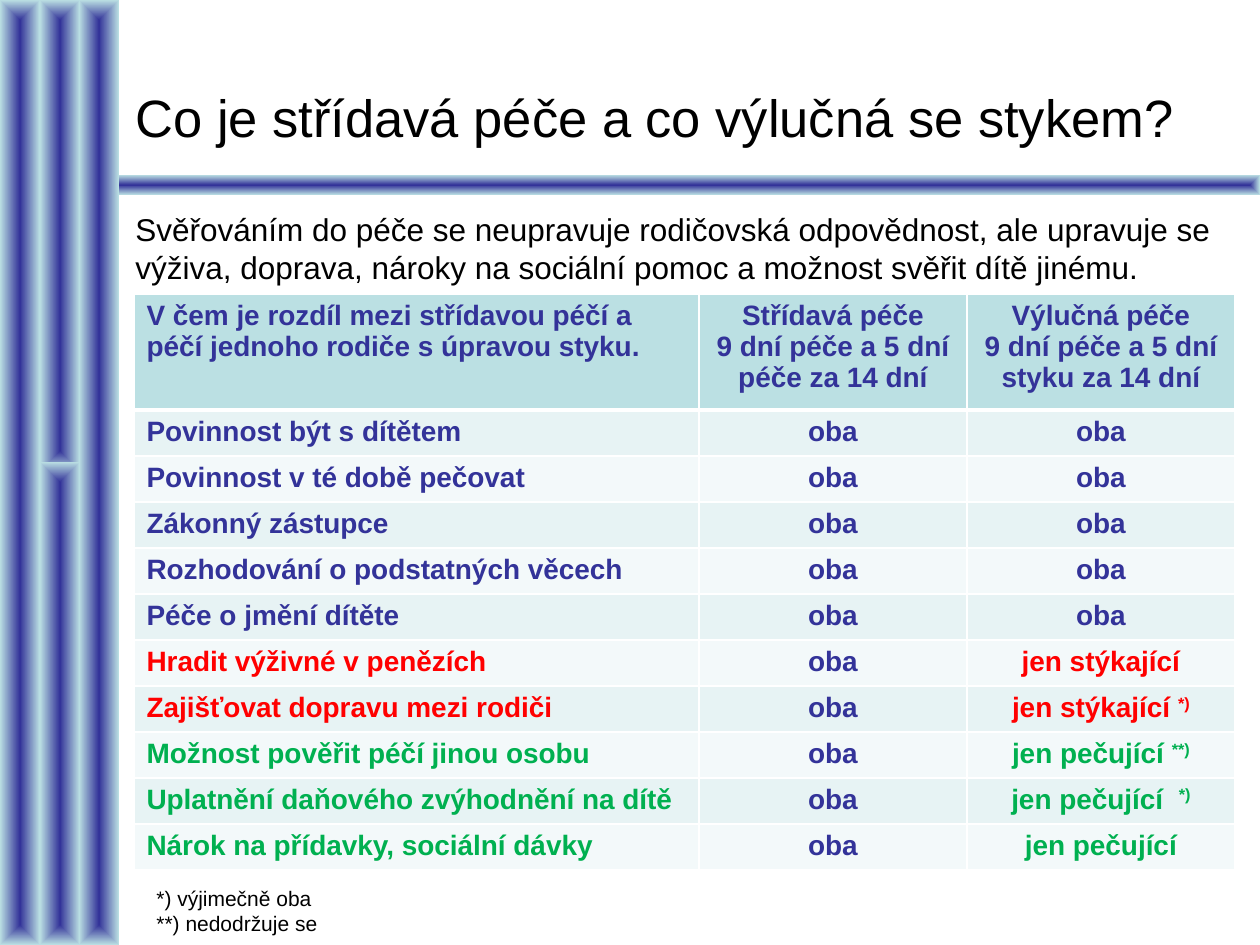
import pptx
import pptx.util
import pptx.dml.color
import pptx.enum.shapes
import pptx.enum.text
import pptx.oxml
import pptx.oxml.ns
from dataclasses import dataclass

ALIGN = pptx.enum.text.PP_ALIGN
ANCHOR = pptx.enum.text.MSO_ANCHOR
PX = 914400 // 126


@dataclass(frozen=True)
class Theme:
    font: str = "Arial"
    black: str = "000000"
    white: str = "FFFFFF"
    navy: str = "333399"
    aqua: str = "BBE0E3"
    red: str = "FF0000"
    green: str = "00B050"
    bands: tuple = ("E7F3F4", "F3F9FA")
    head: int = 30
    lead: int = 18
    cell: int = 16
    note: int = 12


def rgb(code):
    return pptx.dml.color.RGBColor.from_string(code)


def write(frame, text, *, font, size, color, bold=False, align=ALIGN.LEFT, mark=""):
    frame.word_wrap = True
    for i, line in enumerate(text.split("\n")):
        para = frame.paragraphs[0] if i == 0 else frame.add_paragraph()
        para.alignment = align
        for part in filter(None, (line, mark)):
            run = para.add_run()
            run.text = part
            run.font.name = font
            run.font.size = pptx.util.Pt(size)
            run.font.bold = bold
            run.font.color.rgb = rgb(color)
            if part == mark:
                run.font.superscript = True
                run._r.get_or_add_rPr().set("baseline", "30000")


class Deck:
    def __init__(self, theme):
        self.theme = theme
        self.show = pptx.Presentation()
        self.show.slide_width = 1260 * PX
        self.show.slide_height = 945 * PX
        self.slide = self.show.slides.add_slide(self.show.slide_layouts[5])

    def bar(self, *box):
        kind = pptx.enum.shapes.MSO_SHAPE.RECTANGLE
        shape = self.slide.shapes.add_shape(kind, *(n * PX for n in box))
        shape.shadow.inherit = False
        shape.line.fill.background()
        shape.fill.gradient()
        for stop, code in zip(shape.fill.gradient_stops, (self.theme.navy, self.theme.aqua)):
            stop.color.rgb = rgb(code)
        grad = shape._element.spPr.find(pptx.oxml.ns.qn("a:gradFill"))
        grad.remove(grad.find(pptx.oxml.ns.qn("a:lin")))
        grad.append(pptx.oxml.parse_xml(
            f'<a:path {pptx.oxml.ns.nsdecls("a")} path="shape">'
            '<a:fillToRect l="50000" t="50000" r="50000" b="50000"/></a:path>'))

    def title(self, text, *box):
        shape = self.slide.shapes.title
        shape.left, shape.top, shape.width, shape.height = (n * PX for n in box)
        shape.text_frame.vertical_anchor = ANCHOR.MIDDLE
        write(shape.text_frame, text, font=self.theme.font,
              size=self.theme.head, color=self.theme.black)

    def text(self, text, size, *box):
        shape = self.slide.shapes.add_textbox(*(n * PX for n in box))
        write(shape.text_frame, text, font=self.theme.font, size=size, color=self.theme.black)

    def edge(self, cell, top, low):
        props = cell._tc.get_or_add_tcPr()
        for i, (side, width) in enumerate((("L", 1), ("R", 1), ("T", top), ("B", low))):
            props.insert(i, pptx.oxml.parse_xml(
                f'<a:ln{side} {pptx.oxml.ns.nsdecls("a")} w="{width * 12700}"><a:solidFill>'
                f'<a:srgbClr val="{self.theme.white}"/></a:solidFill></a:ln{side}>'))

    def table(self, rows, left, top, cols, first, rest):
        tall = first + rest * (len(rows) - 1)
        grid = self.slide.shapes.add_table(
            len(rows), len(cols), left * PX, top * PX, sum(cols) * PX, tall * PX).table
        grid.horz_banding = False
        for col, width in zip(grid.columns, cols):
            col.width = width * PX
        for r, (cells, tint, mark) in enumerate(rows):
            grid.rows[r].height = (rest if r else first) * PX
            back = self.theme.bands[(r - 1) % 2] if r else self.theme.aqua
            for c, text in enumerate(cells):
                cell = grid.cell(r, c)
                cell.fill.solid()
                cell.fill.fore_color.rgb = rgb(back)
                self.edge(cell, 3 if r == 1 else 1, 1 if r else 3)
                write(cell.text_frame, text, font=self.theme.font, size=self.theme.cell,
                      bold=True, color=self.theme.navy if c == 1 else tint,
                      align=ALIGN.CENTER if c else ALIGN.LEFT, mark=mark if c == 2 else "")


def main():
    theme = Theme()
    deck = Deck(theme)
    for box in ((0, 175, 1260, 20), (0, 0, 40, 945), (79, 0, 40, 945),
                (40, 0, 40, 471), (40, 462, 40, 483)):
        deck.bar(*box)
    deck.title("Co je střídavá péče a co výlučná se stykem?", 123, 38, 1122, 157)

    head = ("V čem je rozdíl mezi střídavou péčí a péčí jednoho rodiče s úpravou styku.",
            "Střídavá péče\n9 dní péče a 5 dní péče za 14 dní",
            "Výlučná péče\n9 dní péče a 5 dní styku za 14 dní")
    duties = (
        ("Povinnost být s dítětem", "oba", theme.navy, ""),
        ("Povinnost v té době pečovat", "oba", theme.navy, ""),
        ("Zákonný zástupce", "oba", theme.navy, ""),
        ("Rozhodování o podstatných věcech", "oba", theme.navy, ""),
        ("Péče o jmění dítěte", "oba", theme.navy, ""),
        ("Hradit výživné v penězích", "jen stýkající", theme.red, ""),
        ("Zajišťovat dopravu mezi rodiči", "jen stýkající ", theme.red, "*)"),
        ("Možnost pověřit péčí jinou osobu", "jen pečující ", theme.green, "**)"),
        ("Uplatnění daňového zvýhodnění na dítě", "jen pečující  ", theme.green, "*)"),
        ("Nárok na přídavky, sociální dávky", "jen pečující", theme.green, ""),
    )
    rows = [(head, theme.navy, "")]
    rows += [((duty, "oba", sole), tint, mark) for duty, sole, tint, mark in duties]
    deck.table(rows, 134, 294, (565, 268, 268), 116, 46)

    deck.text("*) výjimečně oba\n**) nedodržuje se", theme.note, 144, 879, 674, 63)
    deck.text("Svěřováním do péče se neupravuje rodičovská odpovědnost, ale upravuje se "
              "výživa, doprava, nároky na sociální pomoc a možnost svěřit dítě jinému.",
              theme.lead, 123, 204, 1122, 89)
    deck.show.save("out.pptx")


if __name__ == "__main__":
    main()
